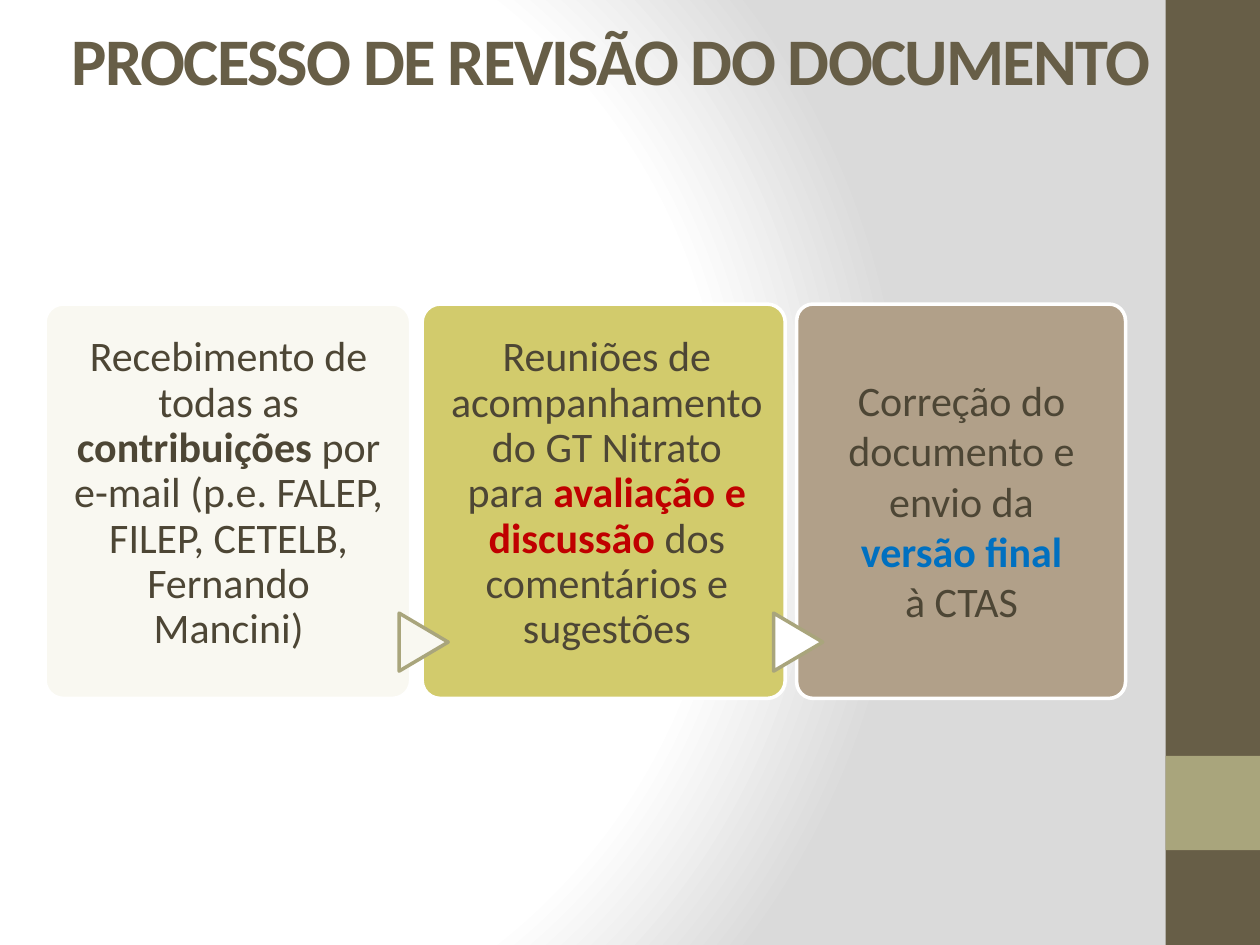
"""Build the slide on the document review process, with three linked steps."""
from dataclasses import dataclass

from lxml.etree import fromstring
from pptx import Presentation
from pptx.dml.color import RGBColor
from pptx.enum.shapes import MSO_SHAPE
from pptx.enum.text import MSO_ANCHOR, PP_ALIGN
from pptx.util import Cm, Pt


@dataclass(frozen=True)
class Theme:
    font: str = "Calibri"
    title_size: int = 38
    body_size: int = 24
    border: int = 2
    white: str = "FFFFFF"
    shade: str = "DADADA"
    brown: str = "675E47"
    olive: str = "A9A57C"
    ink: str = "4D4635"
    red: str = "C00000"
    blue: str = "0070C0"
    cream: str = "F9F8F1"
    lime: str = "D2CB6C"
    taupe: str = "B1A089"


theme = Theme()


def add_text(paragraph, text, size=theme.body_size, color=theme.ink, bold=False, spacing=None):
    run = paragraph.add_run()
    run.text = text
    run.font.name = theme.font
    run.font.size = Pt(size)
    run.font.bold = bold
    run.font.color.rgb = RGBColor.from_string(color)
    if spacing is not None:
        run.font._element.set("spc", str(spacing))


def add_block(kind, left, top, width, height, fill, border=None):
    block = slide.shapes.add_shape(kind, Cm(left), Cm(top), Cm(width), Cm(height))
    block.shadow.inherit = False
    block.fill.solid()
    block.fill.fore_color.rgb = RGBColor.from_string(fill)
    if border:
        block.line.color.rgb = RGBColor.from_string(border)
        block.line.width = Pt(theme.border)
    else:
        block.line.fill.background()
    return block


deck = Presentation()
deck.slide_width, deck.slide_height = Cm(25.4), Cm(19.05)
slide = deck.slides.add_slide(deck.slide_layouts[6])

slide.background.fill.solid()
plain_fill = slide.element.xpath(".//p:bgPr/a:solidFill")[0]
stops = "".join(
    f'<a:gs pos="{percent * 1000}"><a:srgbClr val="{color}"/></a:gs>'
    for percent, color in ((0, theme.white), (75, theme.white), (100, theme.shade))
)
glow = fromstring(
    '<a:gradFill xmlns:a="http://schemas.openxmlformats.org/drawingml/2006/main" rotWithShape="1">'
    f'<a:gsLst>{stops}</a:gsLst><a:path path="circle">'
    '<a:fillToRect l="20000" t="50000" r="100000" b="50000"/></a:path></a:gradFill>'
)
plain_fill.getparent().replace(plain_fill, glow)

add_block(MSO_SHAPE.RECTANGLE, 23.5, 0, 1.9, 19.05, theme.brown)
add_block(MSO_SHAPE.RECTANGLE, 23.5, 15.24, 1.9, 1.9, theme.olive)

title = slide.shapes.add_textbox(Cm(1.19), Cm(0), Cm(24.21), Cm(2.36)).text_frame
title.word_wrap = True
title.vertical_anchor = MSO_ANCHOR.MIDDLE
add_text(title.paragraphs[0], "PROCESSO DE REVISÃO DO DOCUMENTO",
         size=theme.title_size, color=theme.brown, bold=True, spacing=-100)

steps = [
    (7.37, theme.cream, None, (0.46, 0.53, 0.43), 0.9, [
        ("Recebimento de todas as ", {}),
        ("contribuições ", {"bold": True}),
        ("por e-mail (p.e. FALEP, FILEP, CETELB, Fernando Mancini)", {}),
    ]),
    (7.32, theme.lime, theme.cream, (0.46, 0.53, 0.33), 0.9, [
        ("Reuniões de acompanhamento do GT Nitrato para ", {}),
        ("avaliação e discussão ", {"color": theme.red, "bold": True}),
        ("dos comentários e sugestões", {}),
    ]),
    (6.63, theme.taupe, theme.white, (0.91, 1.32, 0.89), 1.0, [
        ("Correção do documento e envio da ", {}),
        ("versão final", {"color": theme.blue, "bold": True}),
        (" à CTAS", {}),
    ]),
]
card_left, card_top, card_height, card_gap = 0.91, 6.13, 7.95, 0.23
arrow_width, arrow_height = 1.17, 0.99

for card_width, card_fill, arrow_fill, insets, line_spacing, wording in steps:
    card = add_block(MSO_SHAPE.ROUNDED_RECTANGLE, card_left, card_top,
                     card_width, card_height, card_fill, theme.white)
    card.adjustments[0] = 0.05
    frame = card.text_frame
    frame.word_wrap = True
    frame.vertical_anchor = MSO_ANCHOR.TOP
    frame.margin_left, frame.margin_top, frame.margin_right = map(Cm, insets)
    frame.margin_bottom = 0
    paragraph = frame.paragraphs[0]
    paragraph.alignment = PP_ALIGN.CENTER
    paragraph.line_spacing = line_spacing
    for text, style in wording:
        add_text(paragraph, text, **style)
    if arrow_fill:
        arrow = add_block(MSO_SHAPE.FLOWCHART_EXTRACT, card_left - arrow_width / 2 + 0.03, 12.45,
                          arrow_width, arrow_height, arrow_fill, theme.olive)
        arrow.rotation = 90
    card_left += card_width + card_gap

deck.save("out.pptx")
